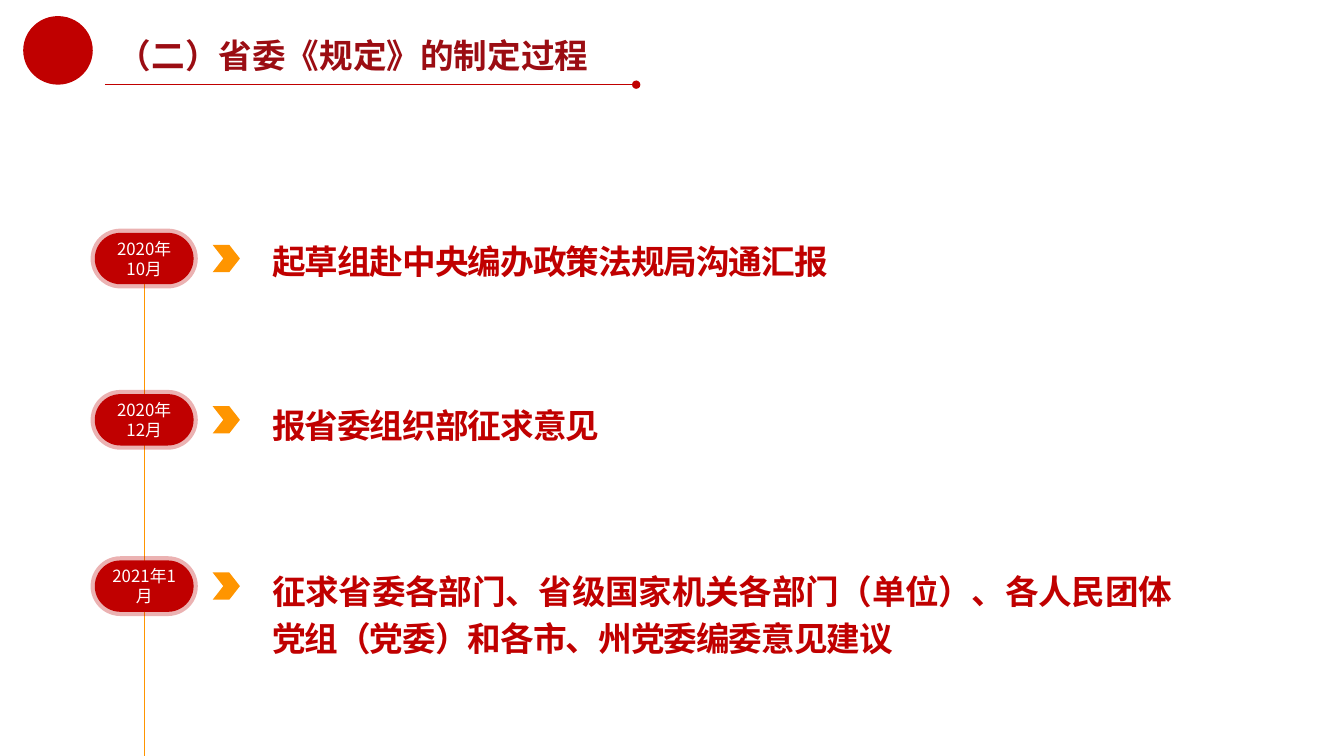
from pptx import Presentation
from pptx.dml.color import RGBColor
from pptx.enum.shapes import MSO_CONNECTOR as Connector, MSO_SHAPE as Shape
from pptx.enum.text import MSO_ANCHOR as Anchor, PP_ALIGN as Align
from pptx.oxml.ns import qn
from pptx.util import Inches, Pt
from lxml.etree import SubElement

RED = RGBColor(0xC0, 0x00, 0x00)
DARK_RED = RGBColor(0x9B, 0x0D, 0x13)
ORANGE = RGBColor(0xFF, 0x95, 0x00)
WHITE = RGBColor(0xFF, 0xFF, 0xFF)
FONT = "Noto Sans CJK SC"

# Date, top of the date pill, text, then top, width and height of its box
STAGES = [
    ("2020年10月", 2.31, "起草组赴中央编办政策法规局沟通汇报", 2.28, 7.82, 0.56),
    ("2020年12月", 3.91, "报省委组织部征求意见", 3.91, 6.14, 0.53),
    ("2021年1月", 5.56,
     "征求省委各部门、省级国家机关各部门（单位）、各人民团体"
     "党组（党委）和各市、州党委编委意见建议", 5.56, 9.11, 1.03),
]


def set_text(shape, text, size, color, align, bold=False, line_spacing=None, tracking=None):
    frame = shape.text_frame
    frame.word_wrap = True
    frame.text = text
    paragraph = frame.paragraphs[0]
    paragraph.alignment = align
    paragraph.line_spacing = line_spacing
    run = paragraph.runs[0]
    run.font.size = Pt(size)
    run.font.bold = bold
    run.font.color.rgb = color
    run.font.name = FONT
    properties = run.font._element
    SubElement(properties, qn("a:ea")).set("typeface", FONT)
    if tracking is not None:
        properties.set("spc", str(round(tracking * 100)))


def add_text(slide, left, top, width, height, text, color, align, **style):
    box = slide.shapes.add_textbox(Inches(left), Inches(top), Inches(width), Inches(height))
    set_text(box, text, 24, color, align, bold=True, **style)


def add_line(slide, x1, y1, x2, y2, color, width, tail=None):
    line = slide.shapes.add_connector(
        Connector.STRAIGHT, Inches(x1), Inches(y1), Inches(x2), Inches(y2))
    line.line.color.rgb = color
    line.line.width = Pt(width)
    if tail:
        SubElement(line.line._get_or_add_ln(), qn("a:tailEnd")).set("type", tail)
    SubElement(line._element.spPr, qn("a:effectLst"))


def add_filled_shape(slide, kind, left, top, width, height, color):
    shape = slide.shapes.add_shape(
        kind, Inches(left), Inches(top), Inches(width), Inches(height))
    shape.shadow.inherit = False
    shape.fill.solid()
    shape.fill.fore_color.rgb = color
    shape.line.fill.background()
    return shape


def add_date_pill(slide, top, date):
    pill = add_filled_shape(slide, Shape.ROUNDED_RECTANGLE, 0.94, top, 0.98, 0.51, RED)
    pill.adjustments[0] = 0.5
    # Wide translucent rim
    pill.line.color.rgb = RED
    pill.line.width = Pt(6)
    rim_color = pill.line._get_or_add_ln().find(".//" + qn("a:srgbClr"))
    SubElement(rim_color, qn("a:alpha")).set("val", "30000")
    pill.text_frame.vertical_anchor = Anchor.MIDDLE
    set_text(pill, date, 12, WHITE, Align.CENTER)


def add_stage(slide, date, pill_top, text, text_top, width, height):
    add_text(slide, 2.6, text_top, width, height, text, RED, Align.JUSTIFY,
             line_spacing=Pt(33), tracking=-0.7)
    add_date_pill(slide, pill_top, date)
    chevron = add_filled_shape(slide, Shape.CHEVRON, 2.11, pill_top + 0.12, 0.27, 0.27, ORANGE)
    chevron.adjustments[0] = 0.39


def main():
    presentation = Presentation()
    presentation.slide_width = Inches(13.33)
    presentation.slide_height = Inches(7.5)
    slide = presentation.slides.add_slide(presentation.slide_layouts[6])

    # Header: plain emblem, rule and title
    add_filled_shape(slide, Shape.OVAL, 0.23, 0.16, 0.69, 0.68, RED)
    add_line(slide, 1.04, 0.84, 6.31, 0.84, RED, 0.75, tail="oval")
    add_text(slide, 1.07, 0.34, 5.12, 0.6, "（二）省委《规定》的制定过程",
             DARK_RED, Align.LEFT, line_spacing=0.9)

    # Timeline
    add_line(slide, 1.43, 2.82, 1.43, 7.5, ORANGE, 0.5)
    for stage in STAGES:
        add_stage(slide, *stage)

    presentation.save("out.pptx")


if __name__ == "__main__":
    main()
